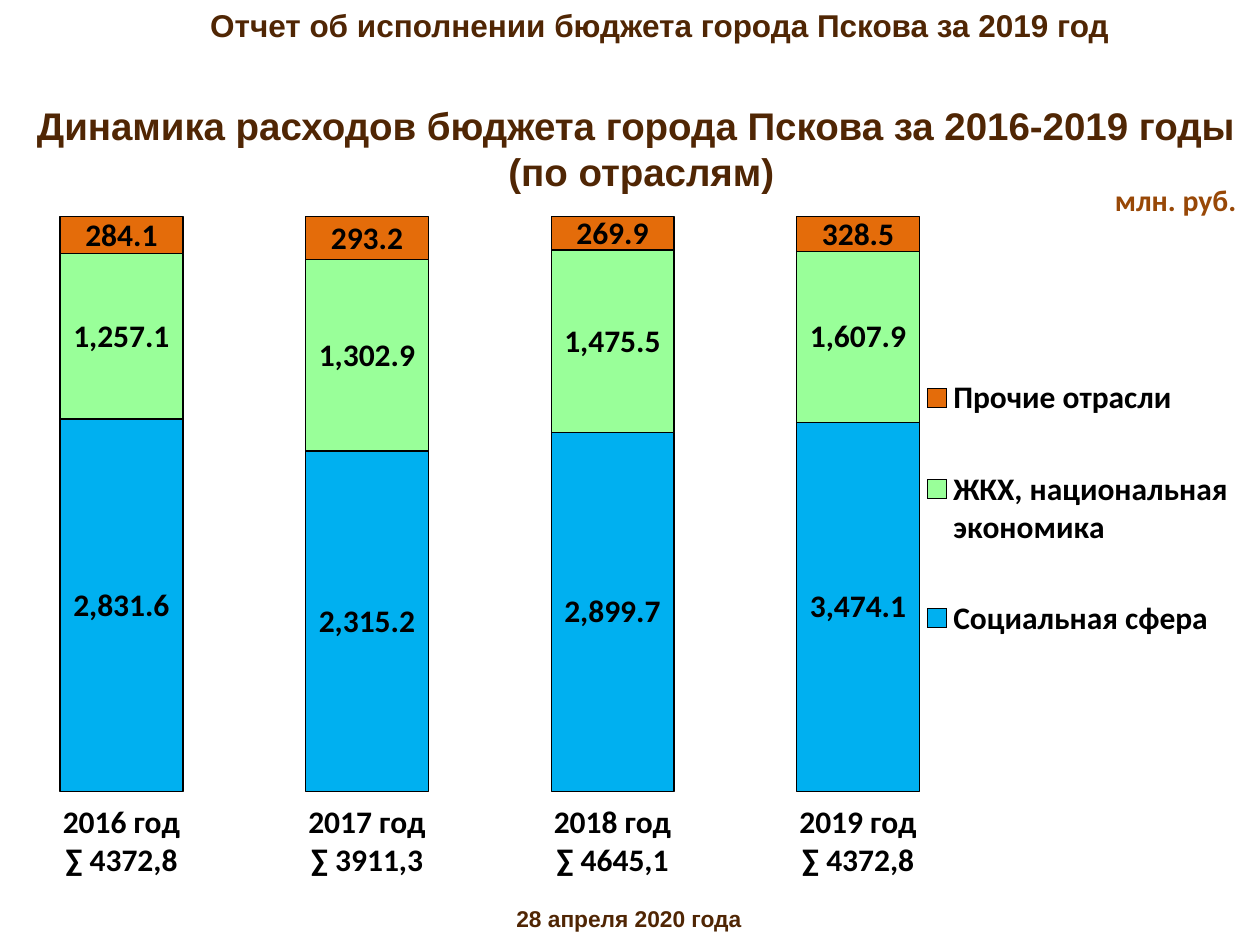
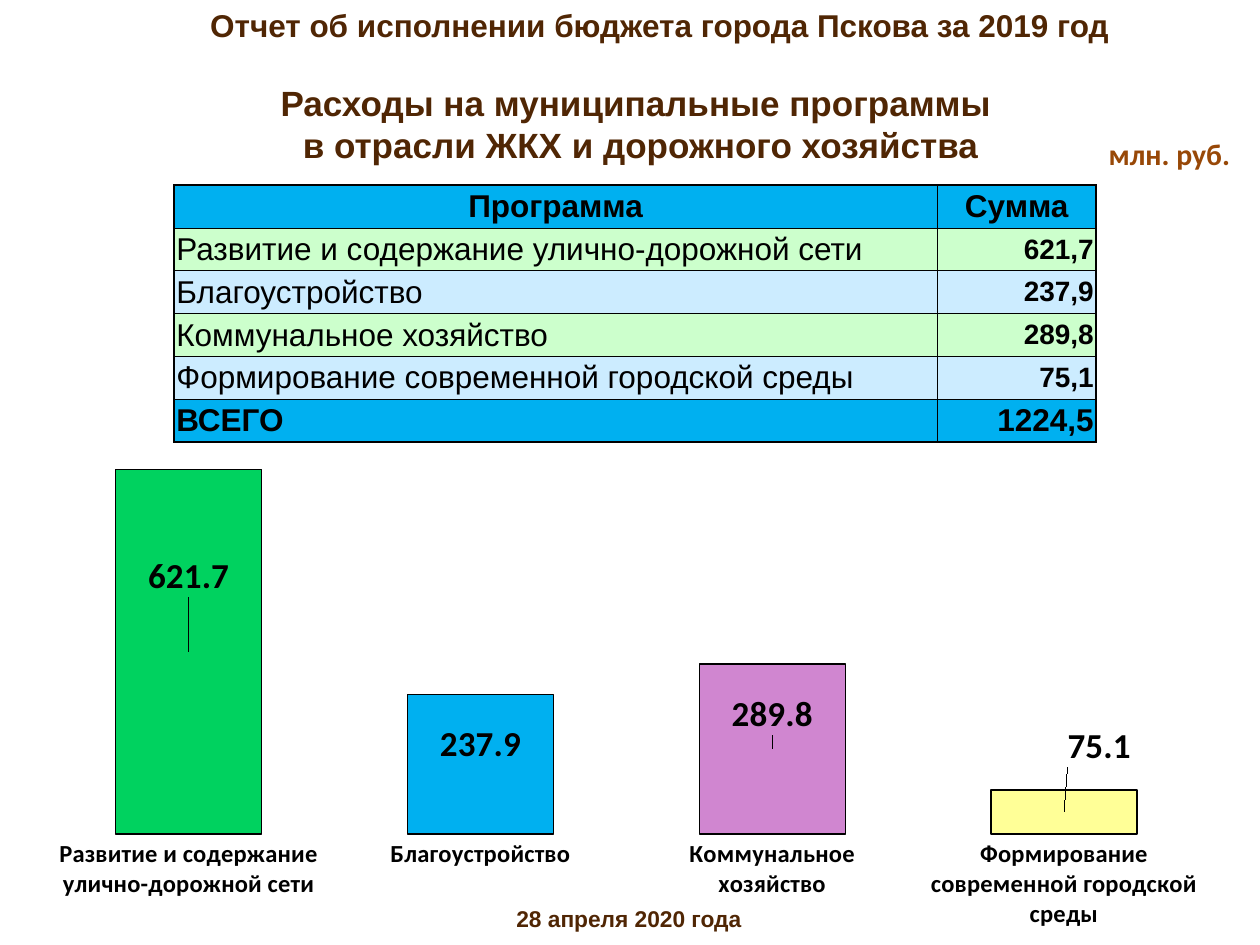
"""Build two slides on the spending of the Pskov city budget."""
from dataclasses import dataclass
from typing import Any

from lxml import etree
from pptx import Presentation
from pptx import util as u
from pptx.chart import data
from pptx.dml import color
from pptx.enum import chart as ch
from pptx.enum import text as tx
from pptx.oxml import ns

BROWN, RUST, BLACK = "502604", "984807", "000000"
BLUE, MINT, SKY = "00B0F0", "CCFFCC", "CCECFF"
LEFT, MID, RIGHT = tx.PP_ALIGN.LEFT, tx.PP_ALIGN.CENTER, tx.PP_ALIGN.RIGHT
FORM = "#,##0.0"


@dataclass
class Label:
    """A line of bold text on a slide."""
    words: str
    box: tuple[float, float, float, float]
    size: float
    hue: str = BROWN
    face: str = "Arial"
    side: Any = MID
    wrap: bool = True
    indent: float = 0


@dataclass
class Series:
    """A named row of chart values with its fill."""
    name: str
    vals: tuple[float, ...]
    hue: str


@dataclass
class Plot:
    """A column chart without a value axis."""
    kind: Any
    box: tuple[float, float, float, float]
    inner: tuple[float, float, float, float]
    cats: tuple[str, ...]
    rows: tuple[Series, ...]
    size: float
    tag: float
    tick: Any
    top: float


@dataclass
class Row:
    """A table row."""
    cells: tuple[str, str]
    hue: str
    sizes: tuple[float, float] = (18, 16)
    bold: tuple[bool, bool] = (False, True)
    sides: tuple[Any, Any] = (LEFT, RIGHT)


HEAD = Label("Отчет об исполнении бюджета города Пскова за 2019 год",
             (0, 0, 10, 0.4), 18, side=LEFT, indent=1.57)
FOOT = Label("28 апреля 2020 года", (-0.01, 7.13, 10, 0.32), 13)

TREND = Plot(
    ch.XL_CHART_TYPE.COLUMN_STACKED_100, (-0.01, 1.7, 9.93, 5.43), (0, 0, 0.785, 0.843),
    ("2016 год\n∑ 4372,8", "2017 год\n∑ 3911,3", "2018 год\n∑ 4645,1", "2019 год\n∑ 4372,8"),
    (Series("Социальная сфера", (2831.6, 2315.2, 2899.7, 3474.1), BLUE),
     Series("ЖКХ, национальная экономика", (1257.1, 1302.9, 1475.5, 1607.9), "99FF99"),
     Series("Прочие отрасли", (284.1, 293.2, 269.9, 328.5), "E46C0A")),
    18, 18, ch.XL_TICK_MARK.OUTSIDE, 1)

AREAS = ("Развитие и содержание улично-дорожной сети", "Благоустройство",
         "Коммунальное хозяйство", "Формирование современной городской среды")
SUMS = (621.7, 237.9, 289.8, 75.1)
HUES = ("00D25F", BLUE, "D086D0", "FFFF97")
SHIFTS = ((0, -0.15), (0, -0.04), (0, -0.07), (0.03, -0.13))
COSTS = Plot(
    ch.XL_CHART_TYPE.COLUMN_CLUSTERED, (0.34, 3.36, 9.31, 4.02), (0, 0, 0.995, 0.811),
    AREAS, (Series("Сумма", SUMS, HUES[0]),), 14, 20, ch.XL_TICK_MARK.NONE, 700)

ROWS = (
    Row(("Программа", "Сумма"), BLUE, (18, 18), (True, True), (MID, MID)),
    *(Row((area, str(total).replace(".", ",")), (MINT, SKY)[i % 2])
      for i, (area, total) in enumerate(zip(AREAS, SUMS))),
    Row(("ВСЕГО", "1224,5"), BLUE, (18, 18), (True, True)),
)


def rgb(code: str) -> color.RGBColor:
    """Turn a hex string into a colour."""
    return color.RGBColor.from_string(code)


def put(obj: Any, vals: dict[str, Any]) -> None:
    """Set each named value on an object."""
    for name, val in vals.items():
        setattr(obj, name, val)


def style(font: Any, size: float, hue: str = BLACK, face: str = "Calibri",
          bold: bool = True) -> None:
    """Format a font."""
    put(font, {"size": u.Pt(size), "name": face, "bold": bold})
    font.color.rgb = rgb(hue)


def span(box: tuple[float, ...]) -> list[u.Length]:
    """Turn a box into lengths."""
    return [u.Inches(part) for part in box]


def write(slide: Any, label: Label) -> None:
    """Add a label to a slide."""
    frame = slide.shapes.add_textbox(*span(label.box)).text_frame
    frame.word_wrap = label.wrap
    para = frame.paragraphs[0]
    put(para, {"text": label.words, "alignment": label.side})
    if label.indent:
        para._p.get_or_add_pPr().set("marL", str(u.Inches(label.indent)))
    for run in para.runs:
        style(run.font, label.size, label.hue, label.face)


def place(node: Any, index: int, vals: dict[str, Any]) -> None:
    """Give a chart part a manual layout."""
    for old in node.findall(ns.qn("c:layout")):
        node.remove(old)
    outer = etree.Element(ns.qn("c:layout"))
    inner = etree.SubElement(outer, ns.qn("c:manualLayout"))
    for name, val in vals.items():
        etree.SubElement(inner, ns.qn(f"c:{name}")).set("val", str(val))
    node.insert(index, outer)


def edge(box: tuple[float, ...]) -> dict[str, Any]:
    """List layout values measured from the chart edge."""
    return {"xMode": "edge", "yMode": "edge", **dict(zip("xywh", box))}


def paint(part: Any, hue: str) -> None:
    """Fill a chart part and outline it in black."""
    part.fill.solid()
    part.fill.fore_color.rgb = rgb(hue)
    part.line.color.rgb = rgb(BLACK)
    part.line.width = u.Pt(0.75)


def draw(slide: Any, plot: Plot) -> Any:
    """Add a column chart and return it."""
    info = data.CategoryChartData(number_format=FORM)
    info.categories = plot.cats
    for row in plot.rows:
        info.add_series(row.name, row.vals)
    chart = slide.shapes.add_chart(plot.kind, *span(plot.box), info).chart
    put(chart, {"has_title": False, "has_legend": False})
    style(chart.font, 10, bold=False)
    put(chart.value_axis, {"visible": False, "has_major_gridlines": False,
                           "minimum_scale": 0, "maximum_scale": plot.top})
    axis = chart.category_axis
    put(axis, {"major_tick_mark": plot.tick, "has_major_gridlines": False})
    axis.format.line.fill.background()
    style(axis.tick_labels.font, plot.size)
    bars = chart.plots[0]
    put(bars, {"gap_width": 100, "vary_by_categories": False})
    for row, series in zip(plot.rows, bars.series):
        paint(series.format, row.hue)
        tags = series.data_labels
        put(tags, {"show_value": True, "number_format": FORM,
                   "number_format_is_linked": False,
                   "position": ch.XL_LABEL_POSITION.CENTER})
        style(tags.font, plot.tag)
    area = chart._chartSpace.chart.plotArea
    place(area, 0, {"layoutTarget": "inner", **edge(plot.inner)})
    return chart


def legend(chart: Any) -> None:
    """Add a legend at the right of a chart."""
    chart.has_legend = True
    key = chart.legend
    put(key, {"position": ch.XL_LEGEND_POSITION.RIGHT, "include_in_layout": False})
    style(key.font, 18)
    place(key._element, 1, edge((0.725, 0.16, 0.275, 0.535)))


def tint(chart: Any) -> None:
    """Colour each column and shift its label."""
    points = chart.plots[0].series[0].points
    for i, (hue, shift) in enumerate(zip(HUES, SHIFTS)):
        paint(points[i].format, hue)
        tag = points[i].data_label
        tag.position = ch.XL_LABEL_POSITION.CENTER
        style(tag.font, COSTS.tag)
        place(tag._dLbl, 1, dict(zip("xy", shift)))


def frame(cell: Any, widths: dict[str, float]) -> None:
    """Draw black borders round a cell."""
    props = cell._tc.get_or_add_tcPr()
    for i, (side, width) in enumerate(widths.items()):
        line = etree.Element(ns.qn(f"a:ln{side}"), w=str(u.Pt(width)))
        fill = etree.SubElement(line, ns.qn("a:solidFill"))
        etree.SubElement(fill, ns.qn("a:srgbClr"), val=BLACK)
        props.insert(i, line)


def grid(slide: Any) -> None:
    """Add the table of programmes."""
    table = slide.shapes.add_table(len(ROWS), 2, *span((1.38, 1.47, 7.32, 2.04))).table
    put(table, {"first_row": False, "horz_banding": False})
    for col, width in zip(table.columns, (6.06, 1.26)):
        col.width = u.Inches(width)
    pads = {f"margin_{side}": u.Inches(0.02) for side in ("left", "right", "top", "bottom")}
    for i, row in enumerate(ROWS):
        table.rows[i].height = u.Inches(0.34)
        ends = {"T": 1 if i == 0 else 0.5, "B": 1 if i == len(ROWS) - 1 else 0.5}
        for j, words in enumerate(row.cells):
            cell = table.cell(i, j)
            put(cell, {"text": words, "vertical_anchor": tx.MSO_ANCHOR.MIDDLE, **pads})
            cell.fill.solid()
            cell.fill.fore_color.rgb = rgb(row.hue)
            frame(cell, {"L": 1, "R": 1, **ends})
            para = cell.text_frame.paragraphs[0]
            para.alignment = row.sides[j]
            style(para.runs[0].font, row.sizes[j], face="Arial", bold=row.bold[j])


def start(deck: Any, title: Label, unit: tuple[float, float]) -> Any:
    """Add a slide with its header, footer, title and unit."""
    slide = deck.slides.add_slide(deck.slide_layouts[6])
    note = Label("млн. руб.", (*unit, 1.17, 0.39), 17, RUST, "Calibri", LEFT, False)
    for label in (HEAD, FOOT, title, note):
        write(slide, label)
    return slide


def main() -> None:
    """Build and save the deck."""
    deck = Presentation()
    put(deck, {"slide_width": u.Inches(10), "slide_height": u.Inches(7.5)})
    title = Label("Динамика расходов бюджета города Пскова за 2016-2019 годы \v(по отраслям)",
                  (0.13, 0.76, 9.92, 0.84), 22, wrap=False)
    legend(draw(start(deck, title, (8.75, 1.39)), TREND))
    title = Label("Расходы на муниципальные программы \vв отрасли ЖКХ и дорожного хозяйства",
                  (2.1, 0.6, 5.97, 0.77), 20, wrap=False)
    slide = start(deck, title, (8.7, 1.03))
    grid(slide)
    tint(draw(slide, COSTS))
    deck.save("out.pptx")


if __name__ == "__main__":
    main()
